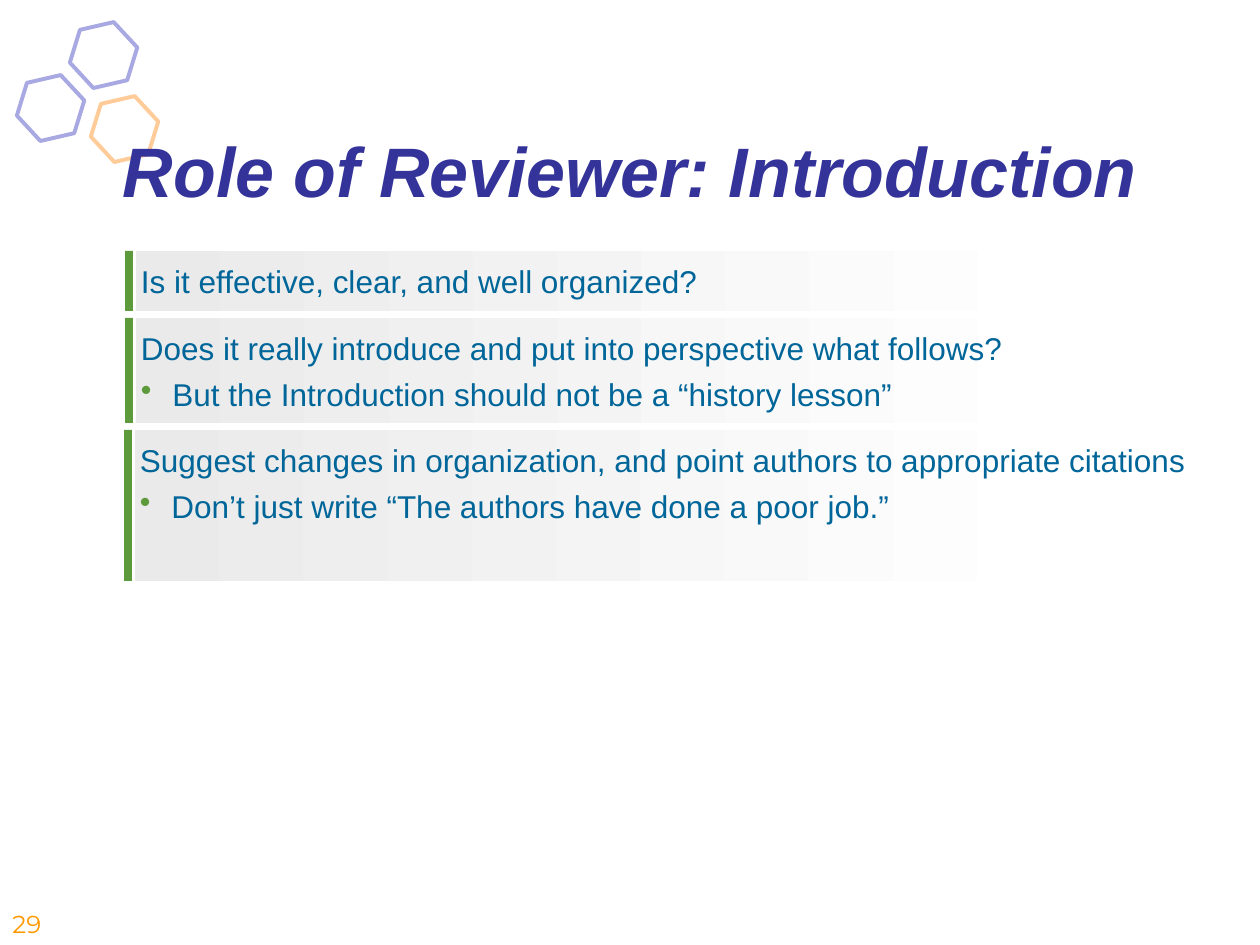
from dataclasses import dataclass

import lxml.etree
import pptx
import pptx.dml.color
import pptx.enum.shapes
import pptx.enum.text
import pptx.oxml.ns
import pptx.util

EMU_PER_PX = 914400 / 126

NAVY = pptx.dml.color.RGBColor(0x33, 0x33, 0x99)
LAVENDER = pptx.dml.color.RGBColor(0xA8, 0xA8, 0xE2)
PEACH = pptx.dml.color.RGBColor(0xFF, 0xCC, 0x99)
ORANGE = pptx.dml.color.RGBColor(0xFF, 0x99, 0x00)
GREEN = pptx.dml.color.RGBColor(0x5D, 0x9A, 0x3C)
TEAL = pptx.dml.color.RGBColor(0x00, 0x66, 0x99)
GREY = pptx.dml.color.RGBColor(0xEA, 0xEA, 0xEA)
WHITE = pptx.dml.color.RGBColor(0xFF, 0xFF, 0xFF)

FIRST_PANEL_TOP = 251
PANEL_GAP = 7


@dataclass
class Hexagon:
    left: int
    top: int
    color: pptx.dml.color.RGBColor


@dataclass
class Panel:
    left: int
    height: int
    text_width: int
    question: str
    advice: str = ""


HEXAGONS = [
    Hexagon(69, 25, LAVENDER),
    Hexagon(16, 78, LAVENDER),
    Hexagon(90, 99, PEACH),
]

PANELS = [
    Panel(125, 60, 905, "Is it effective, clear, and well organized?"),
    Panel(125, 105, 905,
          "Does it really introduce and put into perspective what follows?",
          "But the Introduction should not be a “history lesson”"),
    Panel(124, 151, 1050,
          "Suggest changes in organization, and point authors to appropriate citations",
          "Don’t just write “The authors have done a poor job.”"),
]


def px(length: int) -> int:
    return round(length * EMU_PER_PX)


def add_plain_shape(slide, kind, left: int, top: int, width: int, height: int):
    shape = slide.shapes.add_shape(kind, px(left), px(top), px(width), px(height))
    shape.shadow.inherit = False
    return shape


def add_rectangle(slide, left: int, top: int, width: int, height: int):
    rectangle = add_plain_shape(
        slide, pptx.enum.shapes.MSO_SHAPE.RECTANGLE, left, top, width, height)
    rectangle.line.fill.background()
    return rectangle


def add_text_frame(slide, left: int, top: int, width: int, height: int):
    frame = slide.shapes.add_textbox(px(left), px(top), px(width), px(height)).text_frame
    frame.word_wrap = True
    return frame


def add_run(paragraph, text: str, size: int, color: pptx.dml.color.RGBColor,
            font: str = "Arial"):
    run = paragraph.add_run()
    run.text = text
    run.font.size = pptx.util.Pt(size)
    run.font.name = font
    run.font.color.rgb = color
    return run


def set_hanging_indent(paragraph) -> None:
    properties = paragraph._p.get_or_add_pPr()
    properties.set("marL", str(pptx.util.Inches(0.25)))
    properties.set("indent", str(-pptx.util.Inches(0.25)))


def add_bullet(paragraph) -> None:
    properties = paragraph._p.get_or_add_pPr()
    bullet_color = lxml.etree.SubElement(properties, pptx.oxml.ns.qn("a:buClr"))
    lxml.etree.SubElement(bullet_color, pptx.oxml.ns.qn("a:srgbClr"), val=str(GREEN))
    lxml.etree.SubElement(properties, pptx.oxml.ns.qn("a:buChar"), char="•")


def draw_hexagon(slide, hexagon: Hexagon) -> None:
    outline = add_plain_shape(
        slide, pptx.enum.shapes.MSO_SHAPE.HEXAGON, hexagon.left, hexagon.top, 69, 60)
    outline.adjustments[0] = 0.29
    outline.rotation = 107.1
    outline.fill.background()
    outline.line.color.rgb = hexagon.color
    outline.line.width = pptx.util.Pt(2.25)


def draw_panel(slide, panel: Panel, top: int) -> None:
    accent = add_rectangle(slide, panel.left, top, 8, panel.height)
    accent.fill.solid()
    accent.fill.fore_color.rgb = GREEN

    backdrop = add_rectangle(slide, panel.left + 11, top, 926, panel.height)
    backdrop.fill.gradient()
    backdrop.fill.gradient_angle = 0
    for stop, color in zip(backdrop.fill.gradient_stops, (GREY, WHITE)):
        stop.color.rgb = color

    text_height = 86 if panel.advice else 38
    frame = add_text_frame(slide, panel.left + 16, top + 11, panel.text_width, text_height)
    frame.margin_left = frame.margin_right = frame.margin_top = frame.margin_bottom = 0
    frame.auto_size = pptx.enum.text.MSO_AUTO_SIZE.SHAPE_TO_FIT_TEXT
    question = frame.paragraphs[0]
    set_hanging_indent(question)
    add_run(question, panel.question, 18, TEAL)
    if panel.advice:
        advice = frame.add_paragraph()
        set_hanging_indent(advice)
        add_bullet(advice)
        advice.space_before = pptx.util.Pt(5)
        add_run(advice, panel.advice, 18, TEAL)


def draw_title(slide) -> None:
    frame = add_text_frame(slide, 63, 115, 1134, 110)
    frame.vertical_anchor = pptx.enum.text.MSO_ANCHOR.MIDDLE
    title = frame.paragraphs[0]
    title.alignment = pptx.enum.text.PP_ALIGN.CENTER
    heading = add_run(title, "Role of Reviewer: Introduction", 40, NAVY)
    heading.font.bold = True
    heading.font.italic = True


def main() -> None:
    presentation = pptx.Presentation()
    presentation.slide_width = px(1260)
    presentation.slide_height = px(945)
    slide = presentation.slides.add_slide(presentation.slide_layouts[6])

    for hexagon in HEXAGONS:
        draw_hexagon(slide, hexagon)
    draw_title(slide)
    page_number = add_text_frame(slide, 0, 903, 84, 42)
    add_run(page_number.paragraphs[0], "29", 14, ORANGE, "Montserrat")

    top = FIRST_PANEL_TOP
    for panel in PANELS:
        draw_panel(slide, panel, top)
        top += panel.height + PANEL_GAP

    presentation.save("out.pptx")


if __name__ == "__main__":
    main()
